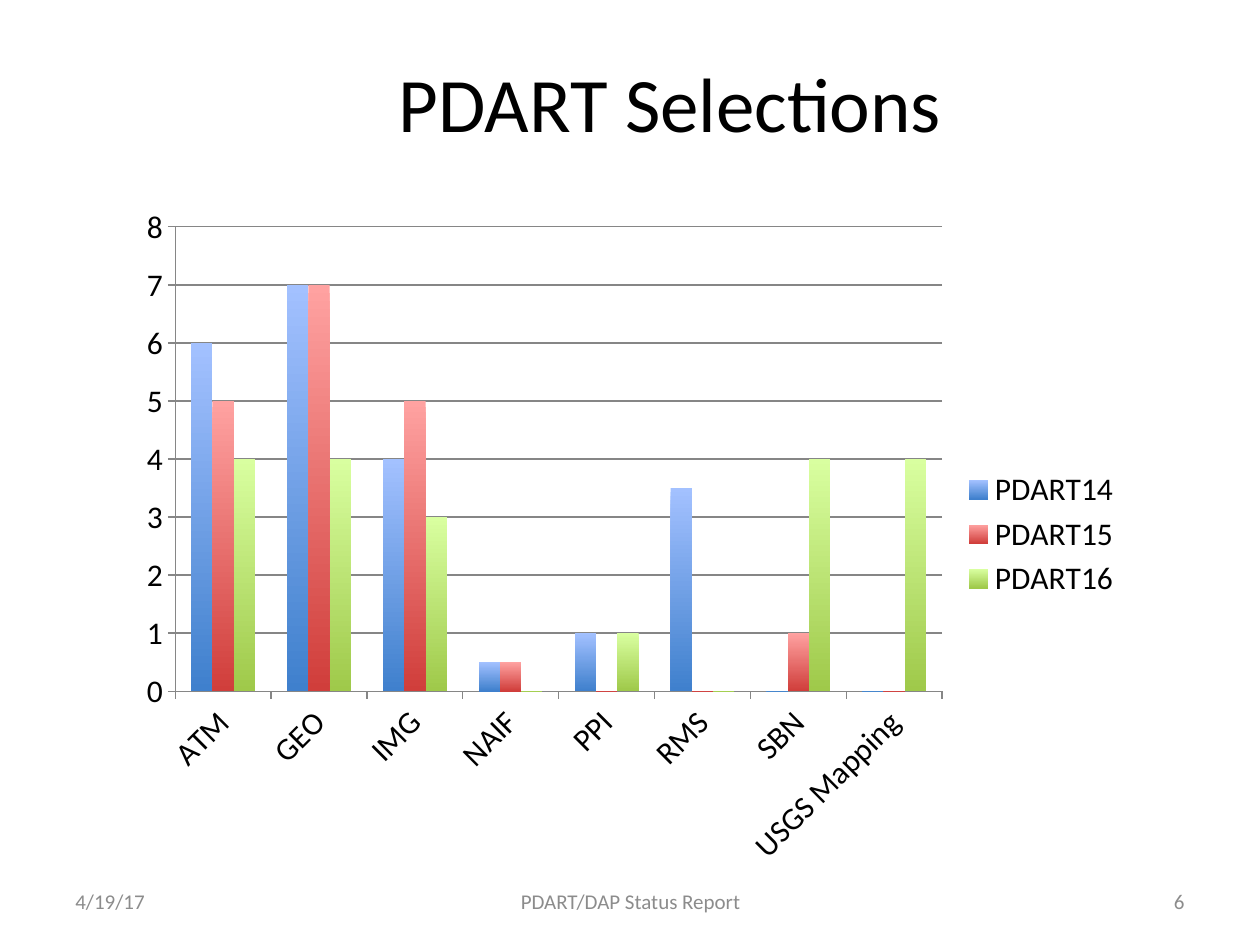
"""Build the PDART Selections slide with its clustered column chart."""
from lxml.etree import SubElement
from pptx import Presentation
from pptx.chart.data import CategoryChartData
from pptx.dml.color import RGBColor
from pptx.enum.chart import XL_CHART_TYPE, XL_LEGEND_POSITION, XL_TICK_MARK
from pptx.enum.text import MSO_ANCHOR, PP_ALIGN
from pptx.oxml.ns import qn
from pptx.util import Inches, Pt

FONT = "Calibri"
COLORS = {"text": "000000", "foot": "8C8C8C", "line": "868686"}
TITLE = "PDART Selections"
FOOTER = [
    ("4/19/17", 0.5, 2.33, PP_ALIGN.LEFT),
    ("PDART/DAP Status Report", 3.42, 3.17, PP_ALIGN.CENTER),
    ("6", 7.17, 2.33, PP_ALIGN.RIGHT),
]
CENTERS = ["ATM", "GEO", "IMG", "NAIF", "PPI", "RMS", "SBN", "USGS Mapping"]
SERIES = [
    ("PDART14", [6, 7, 4, 0.5, 1, 3.5, 0, 0], ("A3C1FF", "3F80CD")),
    ("PDART15", [5, 7, 5, 0.5, 0, 0, 1, 0], ("FFA2A1", "D03E3B")),
    ("PDART16", [4, 4, 3, 0, 1, 0, 4, 4], ("D9FFA0", "9FC94A")),
]
PLOT = {"x": 0.05, "y": 0.05, "w": 0.76, "h": 0.68}


def rgb(value):
    return RGBColor.from_string(value)


def style(font, size, color):
    font.name, font.size = FONT, Pt(size)
    font.color.rgb = rgb(color)


def add_text(slide, text, box, size=12, color="foot", align=PP_ALIGN.CENTER):
    frame = slide.shapes.add_textbox(*map(Inches, box)).text_frame
    frame.word_wrap = True
    frame.vertical_anchor = MSO_ANCHOR.MIDDLE
    para = frame.paragraphs[0]
    para.alignment = align
    run = para.add_run()
    run.text = text
    style(run.font, size, COLORS[color])


def place_plot(chart):
    area = chart._chartSpace.chart.plotArea
    for old in area.findall(qn("c:layout")):
        area.remove(old)
    layout = SubElement(area, qn("c:layout"))
    area.insert(0, layout)
    manual = SubElement(layout, qn("c:manualLayout"))
    rules = {"layoutTarget": "inner", "xMode": "edge", "yMode": "edge", **PLOT}
    for name, value in rules.items():
        SubElement(manual, qn(f"c:{name}")).set("val", str(value))


def add_chart(slide):
    data = CategoryChartData()
    data.categories = CENTERS
    for name, values, _ in SERIES:
        data.add_series(name, values)
    box = map(Inches, (0.99, 1.53, 8.01, 5.42))
    chart = slide.shapes.add_chart(XL_CHART_TYPE.COLUMN_CLUSTERED, *box, data).chart
    style(chart.font, 18, COLORS["text"])
    chart.has_title = False
    chart.has_legend = True
    chart.legend.position = XL_LEGEND_POSITION.RIGHT
    chart.legend.include_in_layout = False
    plot = chart.plots[0]
    plot.gap_width, plot.overlap, plot.vary_by_categories = 150, 0, False
    for series, (_, _, shades) in zip(plot.series, SERIES):
        fill = series.format.fill
        fill.gradient()
        fill.gradient_angle = 270
        for stop, shade, spot in zip(fill.gradient_stops, shades, (0, 1)):
            stop.color.rgb = rgb(shade)
            stop.position = spot
    cat, val = chart.category_axis, chart.value_axis
    val.has_major_gridlines = True
    val.minimum_scale, val.maximum_scale, val.major_unit = 0, 8, 1
    for axis in (cat, val):
        axis.major_tick_mark = XL_TICK_MARK.OUTSIDE
        axis.minor_tick_mark = XL_TICK_MARK.NONE
        style(axis.tick_labels.font, 18, COLORS["text"])
    for part in (cat, val, val.major_gridlines):
        part.format.line.color.rgb = rgb(COLORS["line"])
        part.format.line.width = Pt(0.75)
    cat._element.find(qn("c:txPr")).find(qn("a:bodyPr")).set("rot", "-2700000")
    place_plot(chart)


def main():
    deck = Presentation()
    deck.slide_width, deck.slide_height = Inches(10), Inches(7.5)
    slide = deck.slides.add_slide(deck.slide_layouts[6])
    add_text(slide, TITLE, (1.07, 0.19, 8.5, 1.23), size=44, color="text")
    for text, left, width, align in FOOTER:
        add_text(slide, text, (left, 6.95, width, 0.4), align=align)
    add_chart(slide)
    deck.save("out.pptx")


if __name__ == "__main__":
    main()
